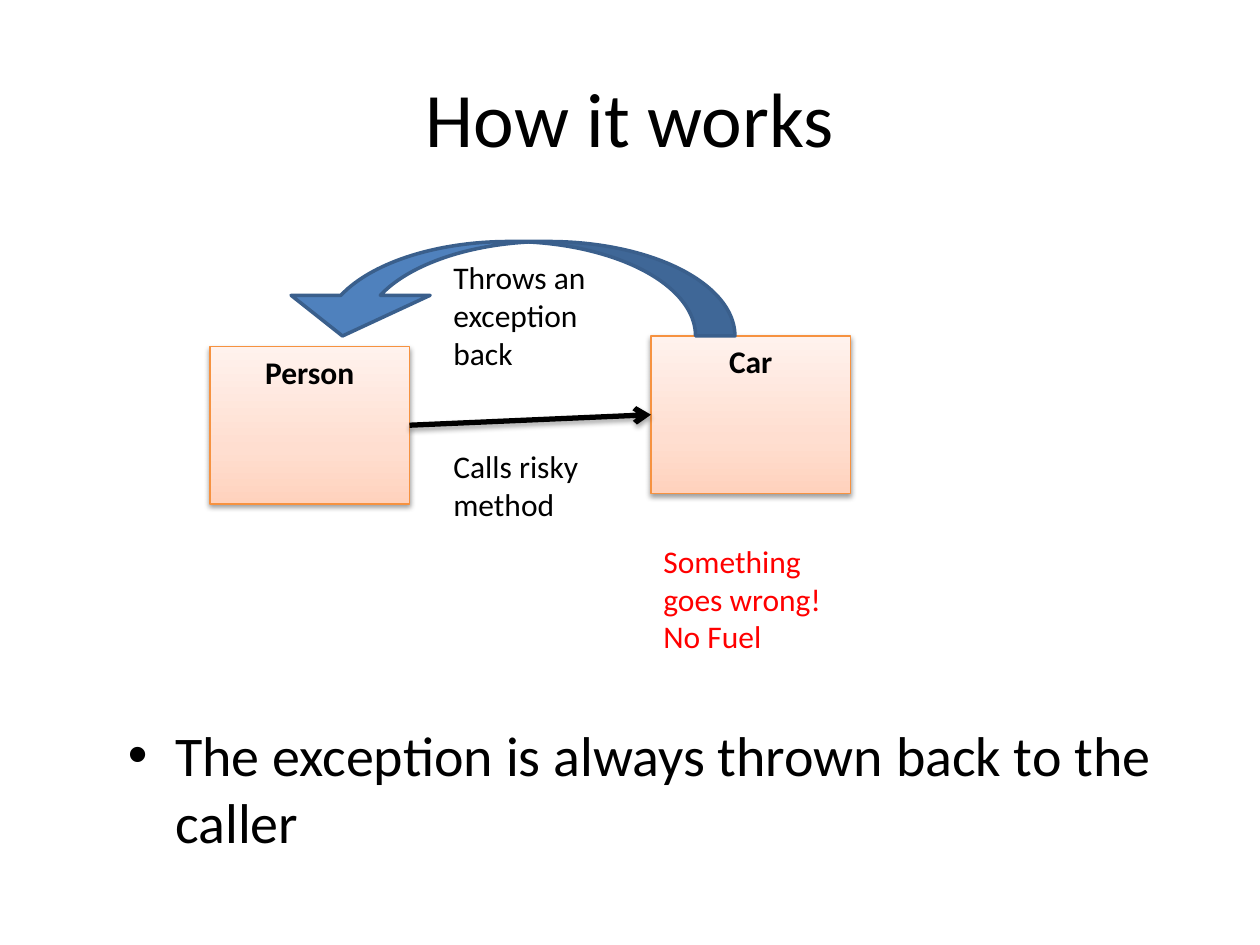
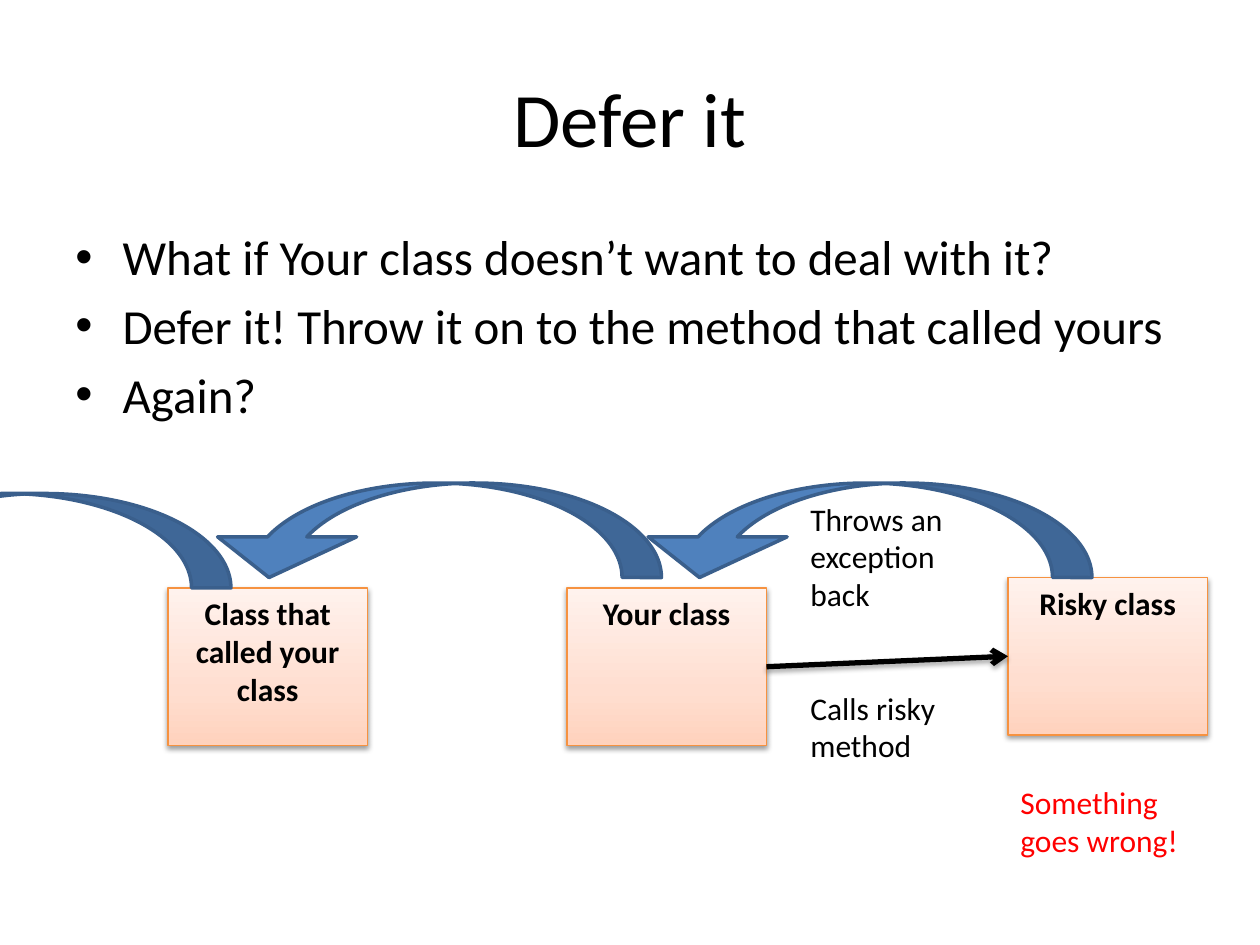
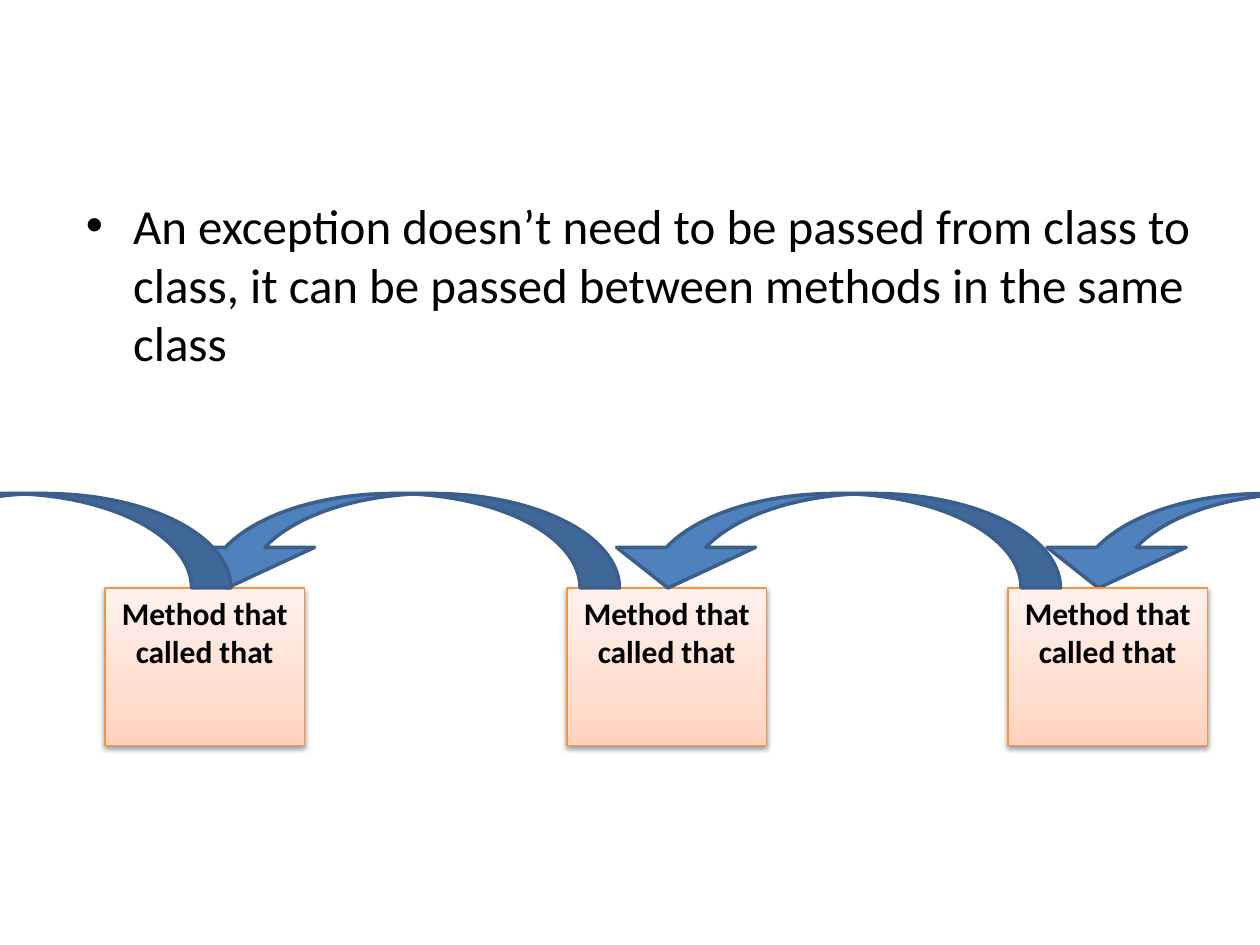
from copy import deepcopy

from lxml.etree import SubElement as Sub
from pptx import Presentation
from pptx.dml.color import RGBColor
from pptx.enum.shapes import MSO_CONNECTOR as Link, MSO_SHAPE as Shape
from pptx.enum.text import MSO_ANCHOR as Anchor, MSO_AUTO_SIZE as Fit, PP_ALIGN as Align
from pptx.oxml.ns import qn
from pptx.util import Pt

BLACK = RGBColor(0, 0, 0)
RED = RGBColor(0xFF, 0, 0)
BLUE = RGBColor(0x4F, 0x81, 0xBD)
NAVY = RGBColor(0x3A, 0x5F, 0x8C)
AMBER = RGBColor(0xF6, 0x92, 0x40)
PEACH = [
    (0, RGBColor(0xFF, 0xD2, 0xBD)),
    (0.35, RGBColor(0xFF, 0xDE, 0xD0)),
    (1, RGBColor(0xFF, 0xF2, 0xED)),
]
FACE = "Calibri"
BOX_W, BOX_H = 114, 90
ARC_W, ARC_H = 264, 54


def place(*sizes):
    return [Pt(size) for size in sizes]


def style(para, size, color=BLACK, bold=False, align=Align.LEFT):
    para.alignment = align
    font = para.font
    font.name = FACE
    font.size = Pt(size)
    font.bold = bold
    font.color.rgb = color


def write(slide, area, text):
    shape = slide.shapes.add_textbox(*place(*area))
    frame = shape.text_frame
    frame.word_wrap = True
    frame.text = text
    return frame


def title(slide, text):
    frame = write(slide, (36, 21.6, 648, 90), text)
    frame.vertical_anchor = Anchor.MIDDLE
    style(frame.paragraphs[0], 44, align=Align.CENTER)


def points(slide, area, size, *lines):
    frame = write(slide, area, "\n".join(lines))
    for para in frame.paragraphs:
        style(para, size)
        para.space_before = Pt(size * 0.2)
        props = para._p.get_or_add_pPr()
        props.set("marL", str(Pt(27)))
        props.set("indent", str(Pt(-27)))
        Sub(props, qn("a:buFont"), typeface="Arial")
        Sub(props, qn("a:buChar"), char="•")


def label(slide, left, top, width, rows, text, color=BLACK):
    frame = write(slide, (left, top, width, 7.2 + 21.8 * rows), text)
    frame.auto_size = Fit.SHAPE_TO_FIT_TEXT
    style(frame.paragraphs[0], 18, color)


def shade(effect, blur, drop, alpha):
    cast = Sub(effect, qn("a:outerShdw"), blurRad=str(Pt(blur)),
               dist=str(Pt(drop)), dir="5400000", rotWithShape="0")
    tone = Sub(cast, qn("a:srgbClr"), val=str(BLACK))
    Sub(tone, qn("a:alpha"), val=str(alpha * 1000))


def box(slide, left, top, text):
    shape = slide.shapes.add_shape(Shape.RECTANGLE, *place(left, top, BOX_W, BOX_H))
    fill = shape.fill
    fill.gradient()
    fill.gradient_angle = 90
    stops = shape.element.spPr.find(".//" + qn("a:gsLst"))
    stops.append(deepcopy(stops[-1]))
    for stop, (spot, color) in zip(fill.gradient_stops, PEACH):
        stop.position = spot
        stop.color.rgb = color
    shape.line.color.rgb = AMBER
    shape.line.width = Pt(0.75)
    shape.shadow.inherit = False
    shade(shape.element.spPr.find(qn("a:effectLst")), 3.1, 1.6, 38)
    frame = shape.text_frame
    frame.word_wrap = True
    frame.vertical_anchor = Anchor.TOP
    frame.text = text
    style(frame.paragraphs[0], 18, bold=True, align=Align.CENTER)


def arc(slide, left, top):
    shape = slide.shapes.add_shape(Shape.CURVED_DOWN_ARROW, *place(left, top, ARC_W, ARC_H))
    shape.element.spPr.find(qn("a:xfrm")).set("flipH", "1")
    for index, value in enumerate((0.417, 1.471, 0.43)):
        shape.adjustments[index] = value
    shape.fill.solid()
    shape.fill.fore_color.rgb = BLUE
    shape.line.color.rgb = NAVY
    shape.line.width = Pt(2)
    shape.shadow.inherit = False


def arrow(slide, *ends):
    link = slide.shapes.add_connector(Link.STRAIGHT, *place(*ends))
    link.line.color.rgb = BLACK
    link.line.width = Pt(3)
    props = link.element.spPr
    Sub(props.find(qn("a:ln")), qn("a:tailEnd"), type="arrow")
    shade(Sub(props, qn("a:effectLst")), 3.1, 1.8, 35)


def call(slide, left, top, caller, risky, rows, fault):
    far = left + 252
    high = top - 6
    box(slide, far, high, risky)
    box(slide, left, top, caller)
    arrow(slide, left + BOX_W, top + BOX_H / 2, far, high + BOX_H / 2)
    label(slide, left + 132, top + 54, 102, 2, "Calls risky method")
    label(slide, left + 132, top - 54, 102, 3, "Throws an exception back")
    arc(slide, left + 36, high - ARC_H)
    label(slide, far, top + 108, 120, rows, fault, RED)


def works(slide):
    title(slide, "How it works")
    points(slide, (66, 408, 606, 108), 32,
           "The exception is always thrown back to the caller")
    call(slide, 120, 198, "Person", "Car", 3, "Something goes wrong! No Fuel")


def defer(slide):
    title(slide, "Defer it")
    points(slide, (36, 126, 648, 120), 28,
           "What if Your class doesn’t want to deal with it?",
           "Defer it! Throw it on to the method that called yours",
           "Again?")
    call(slide, 324, 336, "Your class", "Risky class", 2, "Something goes wrong!")
    box(slide, 96, 336, "Class that called your class")
    arc(slide, 114, 276)
    arc(slide, -132, 282)


def chain(slide):
    top = 336
    high = top - ARC_H
    arc(slide, 588, high)
    box(slide, 576, top, "Method that called that")
    for left, bend in ((324, 342), (60, 90)):
        box(slide, left, top, "Method that called that")
        arc(slide, bend, high)
    arc(slide, -132, high)
    points(slide, (42, 108, 648, 120), 28,
           "An exception doesn’t need to be passed from class to class, "
           "it can be passed between methods in the same class")


def main():
    deck = Presentation()
    deck.slide_width, deck.slide_height = place(720, 540)
    for build in (works, defer, chain):
        build(deck.slides.add_slide(deck.slide_layouts[6]))
    deck.save("out.pptx")


if __name__ == "__main__":
    main()
